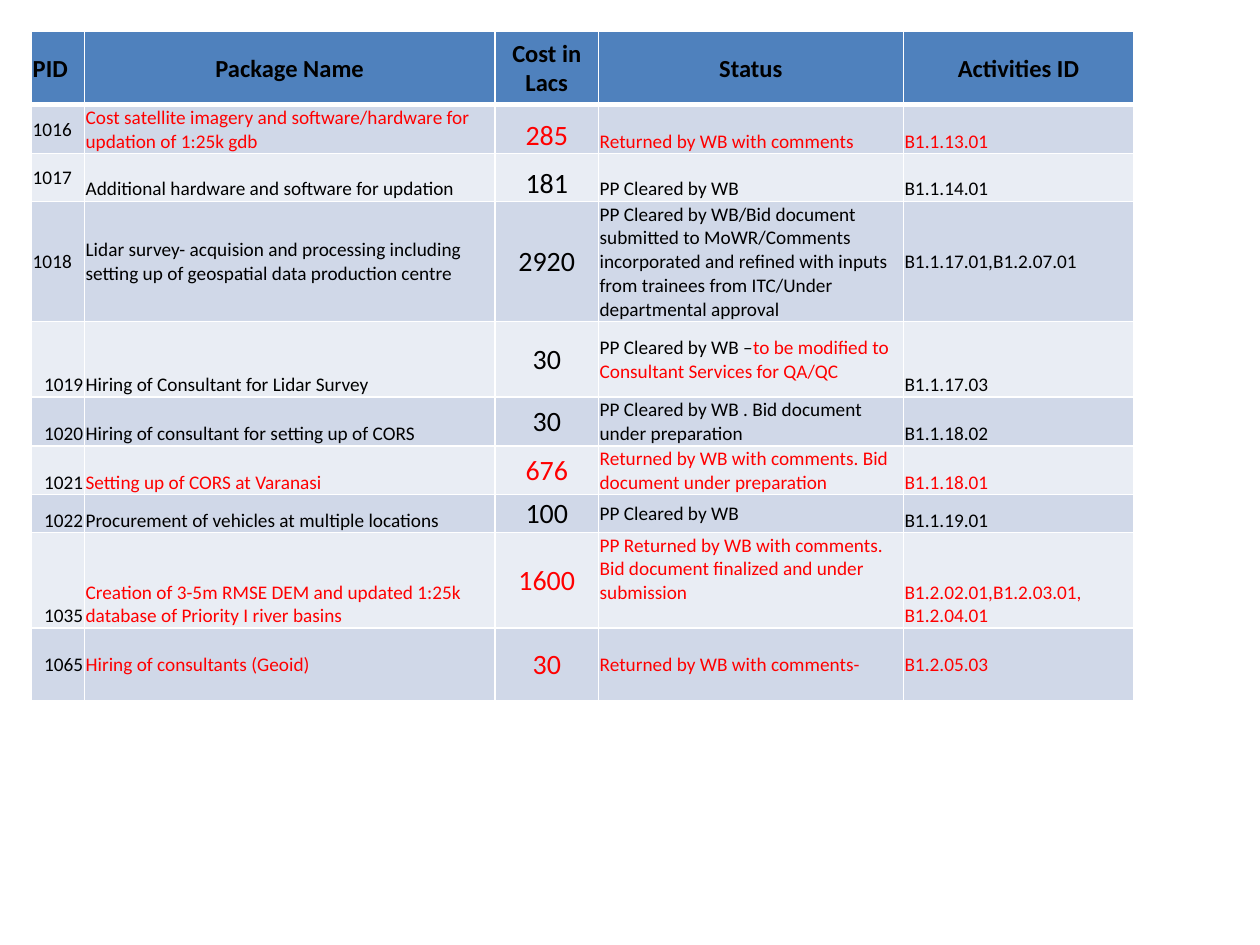
"""Build a slide with the procurement package status table."""
from lxml import etree
from pptx import Presentation
from pptx.dml.color import RGBColor
from pptx.enum.text import MSO_ANCHOR as ANC, PP_ALIGN as AL
from pptx.oxml.ns import qn
from pptx.util import Inches, Pt

BLACK = RGBColor(0x00, 0x00, 0x00)
RED = RGBColor(0xFF, 0x00, 0x00)
WHITE = RGBColor(0xFF, 0xFF, 0xFF)
HEADER = RGBColor(0x4F, 0x81, 0xBD)
BANDS = [RGBColor(0xE9, 0xED, 0xF4), RGBColor(0xD0, 0xD8, 0xE8)]
ANCHORS = {"t": ANC.TOP, "m": ANC.MIDDLE, "b": ANC.BOTTOM}

COLS = [0.42, 3.26, 0.82, 2.42, 1.83]
HEAD = ["PID", "Package Name", "Cost in Lacs", "Status", "Activities ID"]
ROWS = [
    (0.58, "mmmmm", BLACK, HEAD),
    (0.38, "mbbbb", RED, [
        "1016", "Cost satellite imagery and software/hardware for updation of 1:25k gdb",
        "285", "Returned by WB with comments", "B1.1.13.01"]),
    (0.38, "mbbbb", BLACK, [
        "1017", "Additional hardware and software for updation",
        "181", "PP Cleared by WB", "B1.1.14.01"]),
    (0.95, "mmmmm", BLACK, [
        "1018", "Lidar survey- acquision and processing including setting up of "
        "geospatial data production centre",
        "2920", "PP Cleared by WB/Bid document submitted to MoWR/Comments incorporated and "
        "refined with inputs from trainees from ITC/Under departmental approval",
        "B1.1.17.01,B1.2.07.01"]),
    (0.6, "bbmmb", BLACK, [
        "1019", "Hiring of Consultant for Lidar Survey",
        "30", "PP Cleared by WB –|to be modified to Consultant Services for QA/QC", "B1.1.17.03"]),
    (0.38, "bbmmb", BLACK, [
        "1020", "Hiring of consultant for setting up of CORS",
        "30", "PP Cleared by WB . Bid document under preparation", "B1.1.18.02"]),
    (0.38, "bbmmb", RED, [
        "1021", "Setting up of CORS at Varanasi",
        "676", "Returned by WB with comments. Bid document under preparation", "B1.1.18.01"]),
    (0.3, "bbmmb", BLACK, [
        "1022", "Procurement of vehicles at multiple locations",
        "100", "PP Cleared by WB", "B1.1.19.01"]),
    (0.76, "bbmtb", RED, [
        "1035", "Creation of 3-5m RMSE DEM and updated 1:25k database of Priority I river basins",
        "1600", "PP Returned by WB with comments. Bid document finalized and under submission",
        "B1.2.02.01,B1.2.03.01,\nB1.2.04.01"]),
    (0.58, "mmmmm", RED, [
        "1065", "Hiring of consultants (Geoid)",
        "30", "Returned by WB with comments-", "B1.2.05.03"]),
]


def set_borders(cell, widths):
    tc_pr = cell._tc.get_or_add_tcPr()
    for i, (side, width) in enumerate(zip("LRTB", widths)):
        ln = etree.Element(qn(f"a:ln{side}"), w=str(Pt(width)))
        fill = etree.SubElement(ln, qn("a:solidFill"))
        etree.SubElement(fill, qn("a:srgbClr"), val=str(WHITE))
        tc_pr.insert(i, ln)


def write_cell(cell, text, size, color, align, bold):
    tf = cell.text_frame
    for i, line in enumerate(text.split("\n")):
        p = tf.add_paragraph() if i else tf.paragraphs[0]
        p.alignment = align
        p.font.name, p.font.size, p.font.bold = "Calibri", Pt(size), bold
        for j, part in enumerate(line.split("|")):
            r = p.add_run()
            r.text = part
            r.font.color.rgb = RED if j else color


prs = Presentation()
prs.slide_width, prs.slide_height = Inches(10), Inches(7.5)
s = prs.slides.add_slide(prs.slide_layouts[6])
total = sum(row[0] for row in ROWS)
table = s.shapes.add_table(len(ROWS), len(COLS), Inches(0.25), Inches(0.25),
                           Inches(sum(COLS)), Inches(total)).table
for col, width in zip(table.columns, COLS):
    col.width = Inches(width)

for i, (height, anchors, color, texts) in enumerate(ROWS):
    table.rows[i].height = Inches(height)
    for j, text in enumerate(texts):
        cell = table.cell(i, j)
        cell.margin_left = cell.margin_right = cell.margin_top = Inches(0.01)
        cell.margin_bottom = 0
        cell.vertical_anchor = ANCHORS[anchors[j]]
        cell.fill.solid()
        cell.fill.fore_color.rgb = BANDS[i % 2] if i else HEADER
        set_borders(cell, (1, 1, 3 if i == 1 else 1, 1 if i else 3))
        if j == 2 or (i == 0 and j):
            align = AL.CENTER
        elif j == 0 and i > 3:
            align = AL.RIGHT
        else:
            align = AL.LEFT
        size = 14 if i == 0 else 16 if j == 2 else 11
        write_cell(cell, text, size, color if j else BLACK, align, i == 0)

prs.save("out.pptx")
